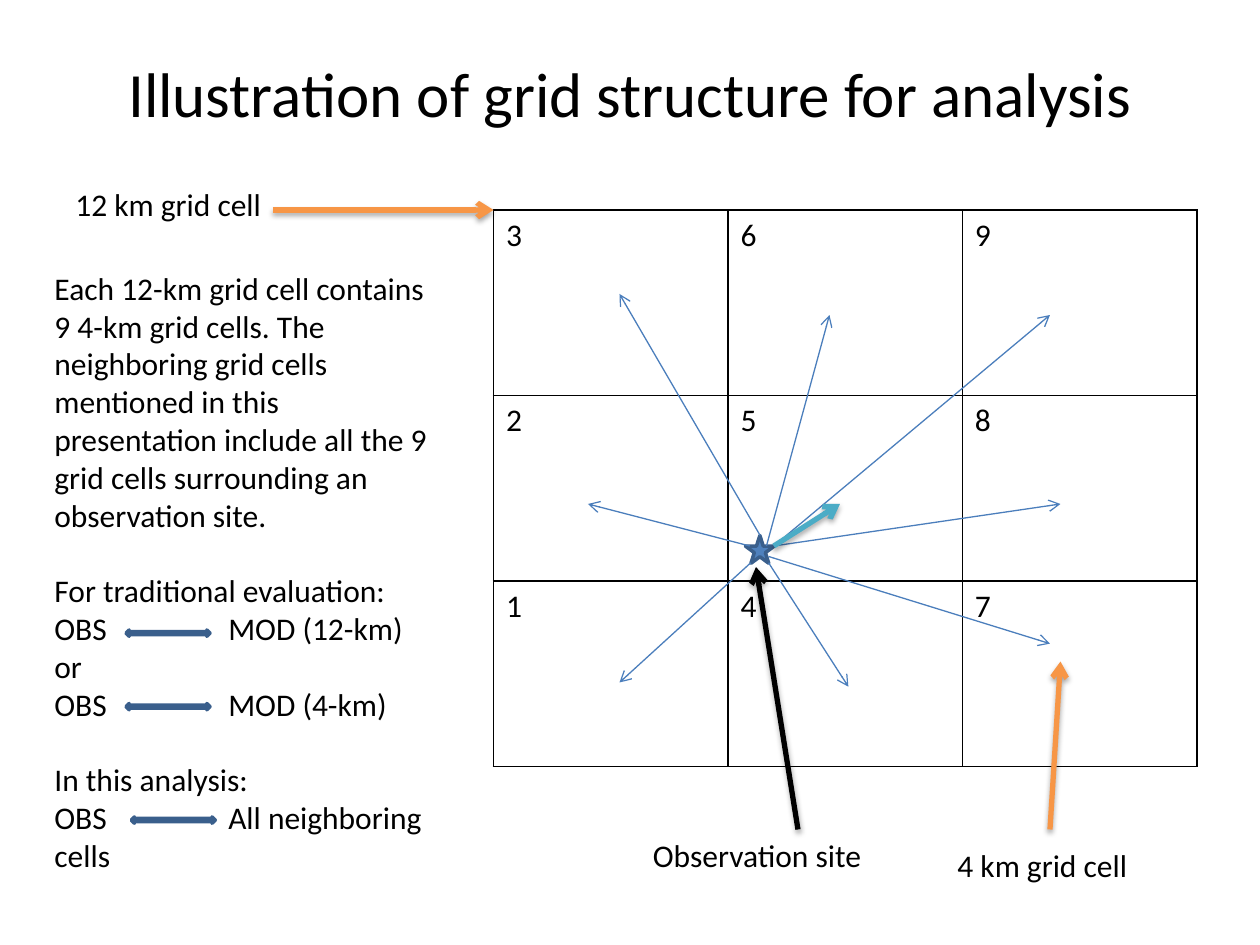
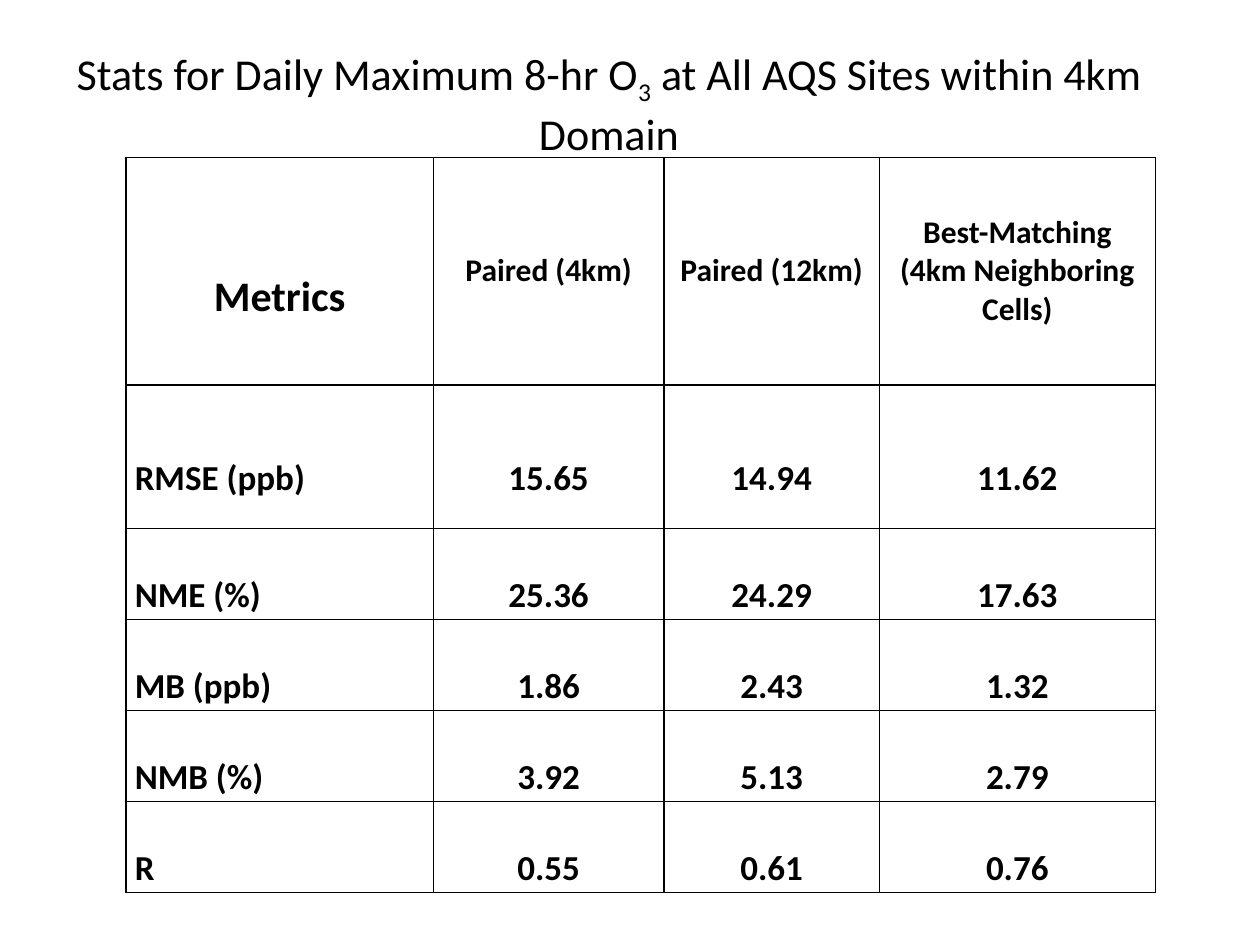
"""Two slides: the model grid around an observation site, and its ozone statistics."""
from lxml.etree import SubElement
from pptx import Presentation
from pptx.dml.color import RGBColor
from pptx.enum.shapes import MSO_CONNECTOR, MSO_SHAPE
from pptx.enum.text import MSO_ANCHOR, MSO_AUTO_SIZE, PP_ALIGN
from pptx.oxml import parse_xml
from pptx.oxml.ns import nsdecls, qn
from pptx.util import Inches, Pt

BLACK, ORANGE, TEAL = "000000", "F79646", "4BACC6"
BLUE, DARK_BLUE, RAY_BLUE = "4F81BD", "3A5F8C", "4B7EBC"
UNIT = Inches(1) / 12
TITLE_ONLY = 5
BODY_SIZE = 18


def color(hex_text):
    return RGBColor.from_string(hex_text)


def grid(*steps):
    return [round(step * UNIT) for step in steps]


deck = Presentation()
deck.slide_width, deck.slide_height = grid(120, 90)

slides = []
for title_area, title_size, pieces in [
    ((6, 3.6, 108, 10.4), 36, ["Illustration of grid structure for analysis"]),
    ((4, 3.8, 108, 12), 25.2,
     ["Stats for Daily Maximum 8-hr O", "3", " at All AQS Sites within 4km Domain"]),
]:
    slide = deck.slides.add_slide(deck.slide_layouts[TITLE_ONLY])
    title = slide.shapes.title
    title.left, title.top, title.width, title.height = grid(*title_area)
    title.text_frame.auto_size = MSO_AUTO_SIZE.NONE
    title.text_frame.vertical_anchor = MSO_ANCHOR.MIDDLE
    heading = title.text_frame.paragraphs[0]
    heading.alignment = PP_ALIGN.CENTER
    heading.font.name, heading.font.size = "Calibri", Pt(title_size)
    heading.font.color.rgb = color(BLACK)
    for piece in pieces:
        run = heading.add_run()
        run.text = piece
        if piece == "3":
            run.font._element.set("baseline", "-25000")
    slides.append(slide)
grid_slide, stats_slide = slides

cell_numbers = [["3", "6", "9"], ["2", "5", "8"], ["1", "4", "7"]]
stats = [
    ["Metrics", "Paired (4km)", "Paired (12km)", "Best-Matching (4km Neighboring Cells)"],
    ["RMSE (ppb)", "15.65", "14.94", "11.62"],
    ["NME (%)", "25.36", "24.29", "17.63"],
    ["MB (ppb)", "1.86", "2.43", "1.32"],
    ["NMB (%)", "3.92", "5.13", "2.79"],
    ["R", "0.55", "0.61", "0.76"],
]
for slide, rows, corner, widths, heights in [
    (grid_slide, cell_numbers, (47, 20), [22.33] * 3, [17.67] * 3),
    (stats_slide, stats, (12, 15), [29.28, 21.96, 20.52, 26.28], [21.65, 13.7] + [8.66] * 4),
]:
    is_stats = slide is stats_slide
    table = slide.shapes.add_table(
        len(rows), len(widths), *grid(*corner, sum(widths), sum(heights))).table
    table.first_row = table.horz_banding = False
    for column, width in zip(table.columns, grid(*widths)):
        column.width = width
    for row, height in zip(table.rows, grid(*heights)):
        row.height = height
    for r, row_texts in enumerate(rows):
        for c, text in enumerate(row_texts):
            cell = table.cell(r, c)
            cell.text = text
            cell.fill.background()
            entry = cell.text_frame.paragraphs[0]
            entry.font.name, entry.font.size = "Calibri", Pt(BODY_SIZE)
            entry.font.color.rgb = color(BLACK)
            entry.font.bold = is_stats
            if is_stats:
                cell.vertical_anchor = MSO_ANCHOR.MIDDLE
                cell.margin_left = cell.margin_right = Inches(0.07)
                cell.margin_top = cell.margin_bottom = 0
                if r or c:
                    entry.font.size = Pt(20 if r else BODY_SIZE)
                else:
                    entry.font.size = Pt(24)
                if r or not c:
                    entry.line_spacing = 2.0
                if c or not r:
                    entry.alignment = PP_ALIGN.CENTER
            properties = cell._tc.get_or_add_tcPr()
            for place, side in enumerate(["lnL", "lnR", "lnT", "lnB"]):
                properties.insert(place, parse_xml(
                    f'<a:{side} {nsdecls("a")} w="12700"><a:solidFill>'
                    f'<a:srgbClr val="{BLACK}"/></a:solidFill></a:{side}>'))

explanation = [
    ("Each 12-km grid cell contains 9 4-km grid cells. The neighboring grid cells mentioned "
     "in this presentation include all the 9 grid cells surrounding an observation site.", 0),
    ("For traditional evaluation:", 1),
    ("OBS\tMOD (12-km)", 0),
    ("or", 0),
    ("OBS\tMOD (4-km)", 0),
    ("In this analysis:", 1),
    ("OBS\tAll neighboring cells", 0),
]
for area, lines in [
    ((6, 17, 24, 4.8), [("12 km grid cell", 0)]),
    ((61, 79, 30, 4.8), [("Observation site", 0)]),
    ((90, 80, 21, 4.8), [("4 km grid cell", 0)]),
    ((4, 25, 38, 66.6), explanation),
]:
    frame = grid_slide.shapes.add_textbox(*grid(*area)).text_frame
    frame.word_wrap = True
    for number, (text, starts_section) in enumerate(lines):
        line = frame.add_paragraph() if number else frame.paragraphs[0]
        line.text = text
        line.font.name, line.font.size = "Calibri", Pt(BODY_SIZE)
        line.font.color.rgb = color(BLACK)
        if starts_section:
            line.space_before = Pt(21.6)
        if "\t" in text:
            tab_stops = SubElement(line._p.get_or_add_pPr(), qn("a:tabLst"))
            SubElement(tab_stops, qn("a:tab"), pos=str(Inches(1.38)), algn="l")

for kind, area in [
    (MSO_SHAPE.STAR_5_POINT, (71, 51, 2.75, 2.65)),
    (MSO_SHAPE.LEFT_RIGHT_ARROW, (12, 60, 8, 0.6)),
    (MSO_SHAPE.LEFT_RIGHT_ARROW, (12, 67, 8, 0.6)),
    (MSO_SHAPE.LEFT_RIGHT_ARROW, (12.5, 77.8, 8, 0.6)),
]:
    marker = grid_slide.shapes.add_shape(kind, *grid(*area))
    marker.shadow.inherit = False
    marker.fill.solid()
    marker.fill.fore_color.rgb = color(BLUE)
    marker.line.color.rgb = color(DARK_BLUE)
    marker.line.width = Pt(2)

callouts = [
    ((26, 20, 47, 20), ORANGE),
    ((76, 79, 72, 54), BLACK),
    ((100, 79, 101, 63), ORANGE),
]
rays = [
    ((73.7, 52, 100, 30), RAY_BLUE),
    ((73, 52, 79, 30), RAY_BLUE),
    ((72.4, 51, 59, 28), RAY_BLUE),
    ((71.4, 52, 56, 48), RAY_BLUE),
    ((71.5, 53.6, 59, 65), RAY_BLUE),
    ((73.2, 53.6, 80.8, 65.4), RAY_BLUE),
    ((73.2, 53, 100, 61.3), RAY_BLUE),
    ((73.7, 52, 101, 48), RAY_BLUE),
    ((73.7, 52, 80, 48), TEAL),
]
ray_group = grid_slide.shapes.add_group_shape()
for holder, arrows in [(grid_slide, callouts), (ray_group, rays)]:
    for ends, arrow_color in arrows:
        arrow = holder.shapes.add_connector(MSO_CONNECTOR.STRAIGHT, *grid(*ends))
        is_thin = arrow_color == RAY_BLUE
        arrow.line.color.rgb = color(arrow_color)
        arrow.line.width = Pt(0.75 if is_thin else 3)
        SubElement(arrow.line._get_or_add_ln(), qn("a:tailEnd"), type="arrow")
        effects = SubElement(arrow._element.spPr, qn("a:effectLst"))
        if not is_thin:
            shadow = SubElement(effects, qn("a:outerShdw"), blurRad=str(Pt(3.1)),
                                dist=str(Pt(1.8)), dir="5400000", rotWithShape="0")
            shade = SubElement(shadow, qn("a:srgbClr"), val=BLACK)
            SubElement(shade, qn("a:alpha"), val="35000")

deck.save("out.pptx")
